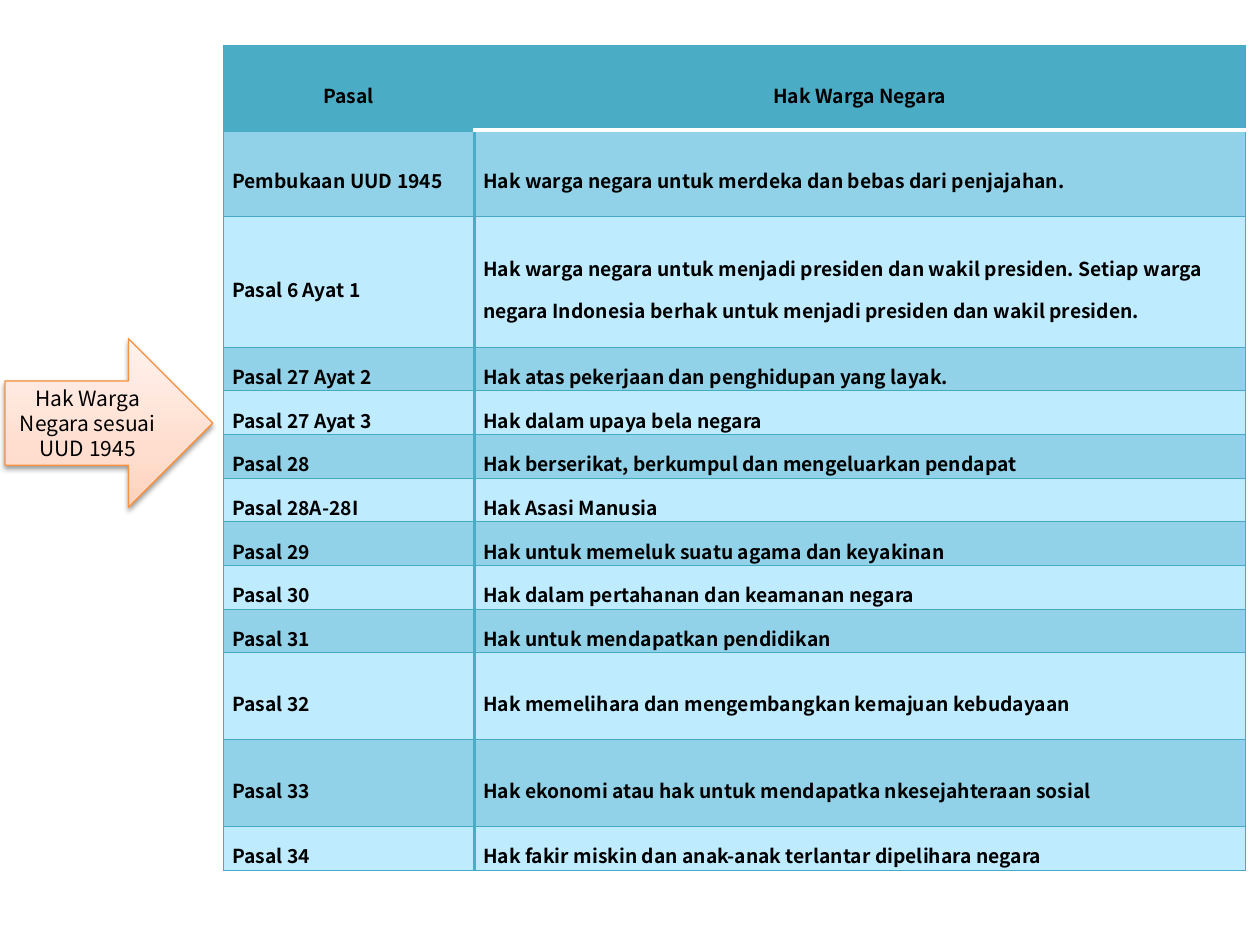
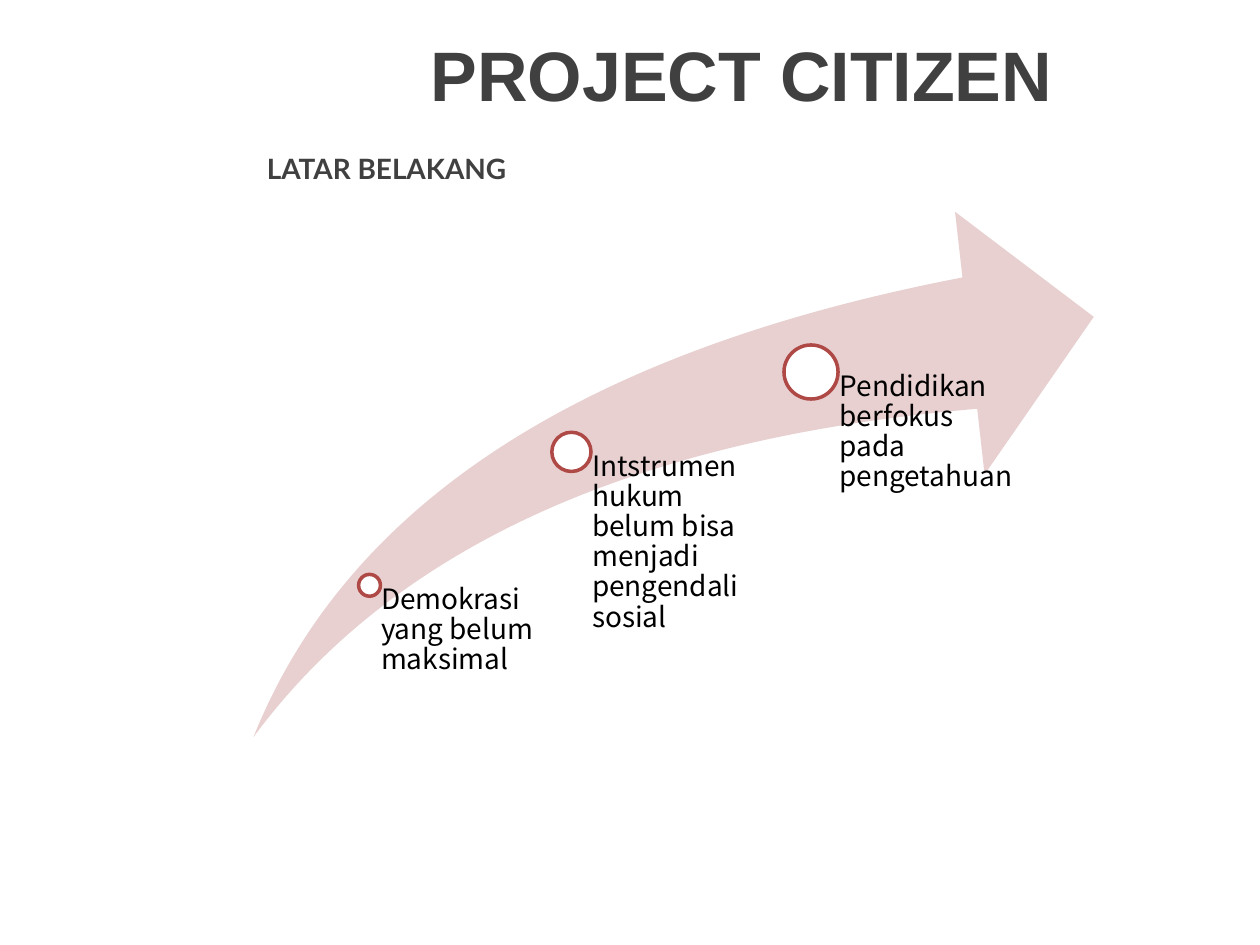
from lxml.etree import SubElement
from pptx import Presentation
from pptx.dml.color import RGBColor
from pptx.enum.shapes import MSO_SHAPE
from pptx.enum.text import MSO_ANCHOR, PP_ALIGN
from pptx.oxml.ns import qn
from pptx.util import Cm, Pt

COLORS = {
    "black": "000000",
    "white": "FFFFFF",
    "heading": "404040",
    "header": "4BACC6",
    "rule": "46AAC5",
    "band_dark": "91D2E8",
    "band_light": "BFEBFF",
    "arrow_line": "F69240",
    "arrow_low": "FFD2BD",
    "arrow_mid": "FFDED0",
    "arrow_high": "FFF2ED",
    "swoosh": "E8D0D0",
    "dot_line": "AE4946",
}
BODY_FONT = "Noto Sans CJK KR"

# Row heights of the rights table, in cm
HEADER, LOW, TALL, DOUBLE = 1.71, 0.88, 1.75, 2.63
RIGHTS = [
    ("Pasal", "Hak Warga Negara", HEADER),
    ("Pembukaan UUD 1945", "Hak warga negara untuk merdeka dan bebas dari penjajahan.", TALL),
    ("Pasal 6 Ayat 1",
     "Hak warga negara untuk menjadi presiden dan wakil presiden. Setiap warga "
     "negara Indonesia berhak untuk menjadi presiden dan wakil presiden.", DOUBLE),
    ("Pasal 27 Ayat 2", "Hak atas pekerjaan dan penghidupan yang layak.", LOW),
    ("Pasal 27 Ayat 3", "Hak dalam upaya bela negara", LOW),
    ("Pasal 28", "Hak berserikat, berkumpul dan mengeluarkan pendapat", LOW),
    ("Pasal 28A-28I", "Hak Asasi Manusia", LOW),
    ("Pasal 29", "Hak untuk memeluk suatu agama dan keyakinan", LOW),
    ("Pasal 30", "Hak dalam pertahanan dan keamanan negara", LOW),
    ("Pasal 31", "Hak untuk mendapatkan pendidikan", LOW),
    ("Pasal 32", "Hak memelihara dan mengembangkan kemajuan kebudayaan", TALL),
    ("Pasal 33", "Hak ekonomi atau hak untuk mendapatka nkesejahteraan sosial", TALL),
    ("Pasal 34", "Hak fakir miskin dan anak-anak terlantar dipelihara negara", LOW),
]

# Centre x, centre y, dot diameter, label width (cm), label
SWOOSH_BOTTOM = 14.86
STEPS = [
    (7.45, 11.8, 0.44, 3.94, "Demokrasi yang belum maksimal"),
    (11.52, 9.11, 0.79, 4.06, "Intstrumen hukum belum bisa menjadi pengendali sosial"),
    (16.35, 7.5, 1.09, 4.06, "Pendidikan berfokus pada pengetahuan"),
]


def rgb(color):
    return RGBColor.from_string(COLORS[color])


def write(frame, text, size, font=BODY_FONT, color="black", bold=False,
          align=PP_ALIGN.LEFT, spacing=1.0):
    paragraph = frame.paragraphs[0]
    paragraph.text = text
    paragraph.alignment = align
    paragraph.line_spacing = spacing
    paragraph.font.name = font
    paragraph.font.size = Pt(size)
    paragraph.font.bold = bold
    paragraph.font.color.rgb = rgb(color)


def add_text(slide, box, text, size, insets=(0.25, 0.13, 0.25, 0.13),
             anchor=MSO_ANCHOR.TOP, **style):
    frame = slide.shapes.add_textbox(*map(Cm, box)).text_frame
    frame.word_wrap = True
    frame.vertical_anchor = anchor
    (frame.margin_left, frame.margin_top,
     frame.margin_right, frame.margin_bottom) = map(Cm, insets)
    write(frame, text, size, **style)


def add_figure(slide, preset, box, fill, line=None, width=0):
    figure = slide.shapes.add_shape(preset, *map(Cm, box))
    figure.shadow.inherit = False
    figure.fill.solid()
    figure.fill.fore_color.rgb = rgb(fill)
    if line:
        figure.line.color.rgb = rgb(line)
        figure.line.width = Pt(width)
    else:
        figure.line.fill.background()
    return figure


def add_color(parent, color):
    return SubElement(parent, qn("a:srgbClr"), val=COLORS[color])


def set_gradient(figure, stops):
    figure.fill.gradient()
    figure.fill.gradient_angle = 90
    stop_list = figure._element.spPr.find(".//" + qn("a:gsLst"))
    for old_stop in list(stop_list):
        stop_list.remove(old_stop)
    for percent, color in stops:
        add_color(SubElement(stop_list, qn("a:gs"), pos=str(percent * 1000)), color)


def set_soft_shadow(figure):
    effects = figure._element.spPr.find(qn("a:effectLst"))
    shadow = SubElement(effects, qn("a:outerShdw"), blurRad=str(Pt(3.1)),
                        dist=str(Pt(1.6)), dir="5400000", rotWithShape="0")
    SubElement(add_color(shadow, "black"), qn("a:alpha"), val="38000")


def set_borders(cell, left, right, top, bottom):
    properties = cell._tc.get_or_add_tcPr()
    for side, (color, width) in zip("LRTB", (left, right, top, bottom)):
        line = SubElement(properties, qn("a:ln" + side), w=str(Pt(width)))
        add_color(SubElement(line, qn("a:solidFill")), color)


def add_rights_table(slide):
    column_widths = (5.06, 15.55)
    heights = [height for *_, height in RIGHTS]
    table = slide.shapes.add_table(
        len(RIGHTS), 2, Cm(4.5), Cm(0.91),
        Cm(sum(column_widths)), Cm(sum(heights))).table
    for column, width in zip(table.columns, column_widths):
        column.width = Cm(width)

    thin, divider, white = ("rule", 0.75), ("header", 2), ("white", 2)
    for r, (article, right, height) in enumerate(RIGHTS):
        table.rows[r].height = Cm(height)
        for c, text in enumerate((article, right)):
            cell = table.cell(r, c)
            under_header = white if c else divider
            set_borders(cell,
                        left=divider if c else thin,
                        right=thin if c else divider,
                        top=under_header if r == 1 else thin,
                        bottom=under_header if r == 0 else thin)
            cell.fill.solid()
            band = "header" if r == 0 else ("band_light", "band_dark")[r % 2]
            cell.fill.fore_color.rgb = rgb(band)
            cell.margin_left = cell.margin_right = Cm(0.18)
            cell.margin_top = cell.margin_bottom = 0
            cell.vertical_anchor = MSO_ANCHOR.MIDDLE
            if r == 0:
                align = PP_ALIGN.CENTER
            else:
                align = PP_ALIGN.LEFT if c else PP_ALIGN.JUSTIFY
            write(cell.text_frame, text, 11, bold=True, align=align, spacing=1.5)


def add_topic_arrow(slide):
    arrow = add_figure(slide, MSO_SHAPE.RIGHT_ARROW, (0.1, 6.83, 4.19, 3.4),
                       "arrow_mid", "arrow_line", 0.75)
    set_gradient(arrow, [(0, "arrow_low"), (35, "arrow_mid"), (100, "arrow_high")])
    set_soft_shadow(arrow)
    arrow.text_frame.word_wrap = True
    arrow.text_frame.vertical_anchor = MSO_ANCHOR.MIDDLE
    write(arrow.text_frame, "Hak Warga Negara sesuai UUD 1945", 12,
          align=PP_ALIGN.CENTER)


def add_step(slide, x, y, diameter, width, label):
    radius = diameter / 2
    add_figure(slide, MSO_SHAPE.OVAL, (x - radius, y - radius, diameter, diameter),
               "white", "dot_line", 2)
    # The label starts at the dot's centre and is indented past its edge
    add_text(slide, (x, y, width, SWOOSH_BOTTOM - y), label, 16,
             insets=(0.53 * diameter, 0, 0, 0), spacing=0.9)


def build_rights_slide(slide):
    add_rights_table(slide)
    add_topic_arrow(slide)


def build_project_slide(slide):
    # Headings
    add_text(slide, (4.5, 0, 20.9, 2.97), "PROJECT CITIZEN", 40,
             anchor=MSO_ANCHOR.MIDDLE, font="Arial", color="heading",
             bold=True, align=PP_ALIGN.CENTER)
    add_text(slide, (4.29, 2.92, 19.86, 13.72), "LATAR BELAKANG", 16,
             insets=(1.09, 0.13, 0.25, 0.13), font="Lato", color="heading",
             bold=True, align=PP_ALIGN.JUSTIFY)

    # Rising arrow with its steps
    swoosh = add_figure(slide, MSO_SHAPE.SWOOSH_ARROW,
                        (5.11, 4.27, 16.94, SWOOSH_BOTTOM - 4.27), "swoosh")
    swoosh.adjustments[0] = swoosh.adjustments[1] = 0.25
    for step in STEPS:
        add_step(slide, *step)


def main():
    deck = Presentation()
    deck.slide_width, deck.slide_height = Cm(25.4), Cm(19.05)
    blank = deck.slide_layouts[6]
    for build in (build_rights_slide, build_project_slide):
        build(deck.slides.add_slide(blank))
    deck.save("out.pptx")


if __name__ == "__main__":
    main()
